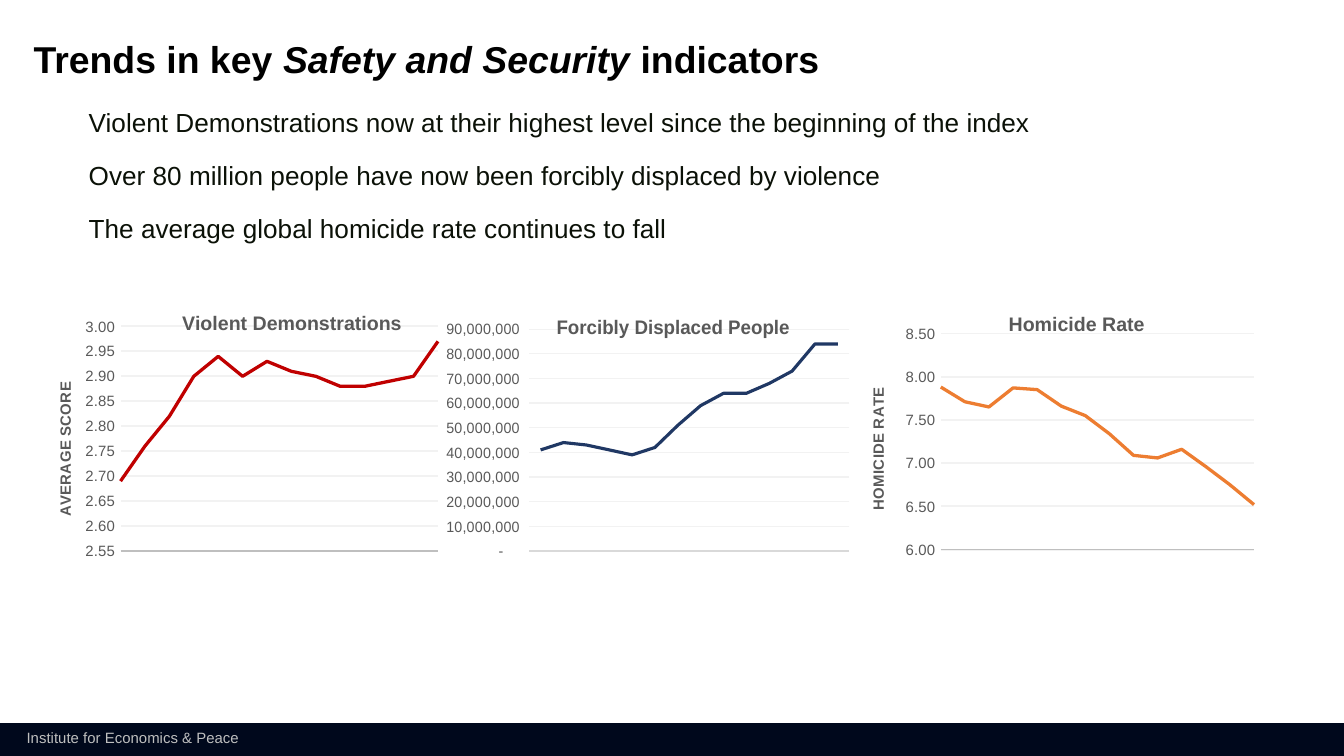
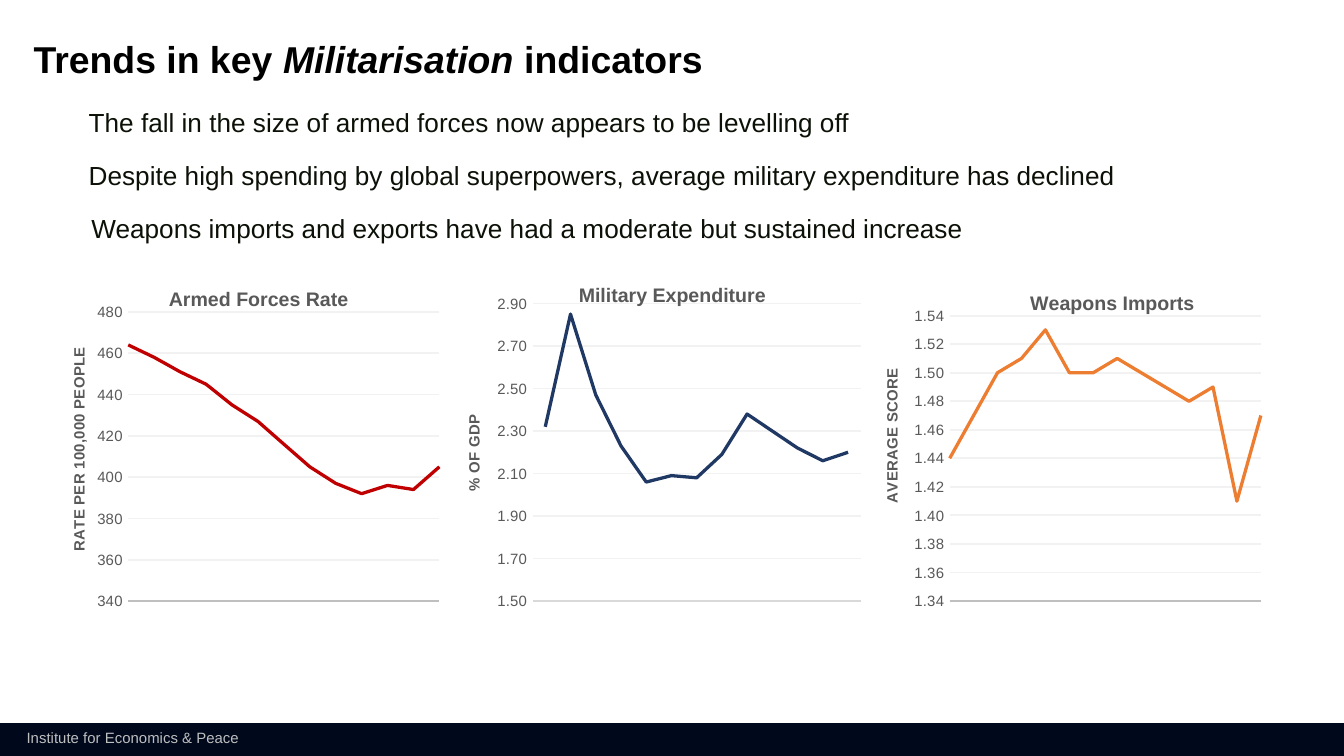
from lxml import etree
from pptx import Presentation
from pptx.chart.data import CategoryChartData
from pptx.dml.color import RGBColor
from pptx.enum.chart import XL_CHART_TYPE, XL_TICK_LABEL_POSITION, XL_TICK_MARK
from pptx.enum.shapes import MSO_SHAPE
from pptx.oxml import parse_xml
from pptx.oxml.ns import nsdecls, qn
from pptx.util import Inches, Pt

HUES = {
    "band": "00081C", "foot": "BFBFBF", "head": "000000", "body": "0B1107",
    "label": "595959", "grid": "F2F2F2", "base": "BFBFBF", "pale": "D9D9D9",
    "red": "C00000", "navy": "203864", "orange": "ED7D31",
}
HUES = {name: RGBColor.from_string(code) for name, code in HUES.items()}
FONT = "Arial"
YEARS = [str(year) for year in range(2008, 2022)]
COMMAS = r'_-* #,##0_-;\-* #,##0_-;_-* "-"??_-;_-@_'

# Each bullet: text, left, width, height
# Each chart: box and title spots in inches, plot as shares of the box
SLIDES = [
    {
        "topic": "Safety and Security ",
        "points": [
            ("Violent Demonstrations now at their highest level since the beginning of the index", 0.58, 7.61, 0.31),
            ("Over 80 million people have now been forcibly displaced by violence", 0.58, 6.19, 0.31),
            ("The average global homicide rate continues to fall", 0.58, 6.19, 0.31),
        ],
        "charts": [
            {"title": "Violent Demonstrations", "spot": (1.33, 2.28),
             "unit": "AVERAGE SCORE", "side": (0.39, 2.82),
             "box": (0.33, 2.22, 3.15, 2.09), "plot": (0.18, 0.1, 0.75, 0.8),
             "hue": "red", "scale": (2.55, 3, 0.05), "format": "#,##0.00", "years": 14,
             "vals": [2.69, 2.76, 2.82, 2.9, 2.94, 2.9, 2.93, 2.91, 2.9, 2.88, 2.88, 2.89, 2.9, 2.97]},
            {"title": "Forcibly Displaced People", "spot": (4.01, 2.31),
             "box": (3.29, 2.22, 3.15, 2.09), "plot": (0.17, 0.11, 0.79, 0.79),
             "hue": "navy", "scale": (0, 90e6, 10e6), "format": COMMAS, "years": 13,
             "vals": [n * 1000000 for n in (41, 44, 43, 41, 39, 42, 51, 59, 64, 64, 68, 73, 84, 84)]},
            {"title": "Homicide Rate", "spot": (7.48, 2.29),
             "unit": "HOMICIDE RATE", "side": (6.44, 2.86),
             "box": (6.37, 2.21, 3.15, 2.09), "plot": (0.2, 0.13, 0.74, 0.77),
             "hue": "orange", "scale": (6, 8.5, 0.5), "format": "#,##0.00", "years": 14,
             "vals": [7.88, 7.71, 7.65, 7.87, 7.85, 7.66, 7.55, 7.34, 7.09, 7.06, 7.16, 6.96, 6.75, 6.52]},
        ],
    },
    {
        "topic": "Militarisation ",
        "points": [
            ("The fall in the size of armed forces now appears to be levelling off", 0.58, 6.19, 0.31),
            ("Despite high spending by global superpowers, average military expenditure has declined", 0.58, 8.21, 0.55),
            ("Weapons imports and exports have had a moderate but sustained increase", 0.6, 6.8, 0.55),
        ],
        "charts": [
            {"title": "Armed Forces Rate", "spot": (1.23, 2.1),
             "unit": "RATE PER 100,000 PEOPLE", "side": (0.49, 2.56),
             "box": (0.36, 1.99, 3.13, 2.76), "plot": (0.19, 0.12, 0.74, 0.78),
             "hue": "red", "scale": (340, 480, 20), "format": "#,##0", "years": 13,
             "vals": [464, 458, 451, 445, 435, 427, 416, 405, 397, 392, 396, 394, 405]},
            {"title": "Military Expenditure", "spot": (4.28, 2.07),
             "unit": "% OF GDP", "side": (3.43, 3.06),
             "box": (3.4, 1.99, 3.13, 2.76), "plot": (0.18, 0.04, 0.78, 0.86),
             "hue": "navy", "scale": (1.5, 3, 0.2), "format": "0.00", "years": 13,
             "vals": [2.32, 2.85, 2.47, 2.23, 2.06, 2.09, 2.08, 2.19, 2.38, 2.3, 2.22, 2.16, 2.2]},
            {"title": "Weapons Imports", "spot": (7.64, 2.13),
             "unit": "AVERAGE SCORE", "side": (6.54, 2.72),
             "box": (6.44, 1.99, 3.13, 2.76), "plot": (0.2, 0.13, 0.74, 0.77),
             "hue": "orange", "scale": (1.34, 1.54, 0.02), "format": "#,##0.00", "years": 14,
             "vals": [1.44, 1.47, 1.5, 1.51, 1.53, 1.5, 1.5, 1.51, 1.5, 1.49, 1.48, 1.49, 1.41, 1.47]},
        ],
    },
]


def style(font, size, hue, bold=False):
    font.name, font.size, font.bold = FONT, Pt(size), bold
    font.color.rgb = HUES[hue]


def layout(node, index, **parts):
    """Give a chart part a fixed place, as shares of the chart box."""
    for old in node.findall(qn("c:layout")):
        node.remove(old)
    outer = parse_xml(f"<c:layout {nsdecls('c')}><c:manualLayout/></c:layout>")
    for key, value in parts.items():
        etree.SubElement(outer[0], qn(f"c:{key}"), val=str(value))
    node.insert(index, outer)


# Wide 16:9 page
deck = Presentation()
deck.slide_width = Inches(10)
deck.slide_height = deck.slide_width * 9 // 16

for page in SLIDES:
    slide = deck.slides.add_slide(deck.slide_layouts[6])
    shapes = slide.shapes

    # Footer band
    band = shapes.add_shape(MSO_SHAPE.RECTANGLE, 0, Inches(5.38), Inches(10), Inches(0.25))
    band.shadow.inherit = False
    band.fill.solid()
    band.fill.fore_color.rgb = HUES["band"]
    band.line.fill.background()
    foot = shapes.add_textbox(Inches(0.1), Inches(5.37), Inches(1.8), Inches(0.24))
    foot.text_frame.text = "Institute for Economics & Peace"
    style(foot.text_frame.paragraphs[0].font, 8, "foot")

    # Title
    frame = shapes.add_textbox(Inches(0.25), Inches(0.31), Inches(8.1), Inches(0.3)).text_frame
    frame.word_wrap = True
    frame.margin_left = frame.margin_right = frame.margin_top = frame.margin_bottom = 0
    line = frame.paragraphs[0]
    line.line_spacing = 0.9
    style(line.font, 20, "head", True)
    for text in ("Trends in key ", page["topic"], "indicators"):
        run = line.add_run()
        run.text = text
        run.font.italic = text == page["topic"]

    # Key points
    for row, (text, left, width, height) in enumerate(page["points"]):
        box = shapes.add_textbox(Inches(left), Inches(0.75 + row * 0.395), Inches(width), Inches(height))
        frame = box.text_frame
        frame.word_wrap = True
        frame.margin_left = frame.margin_right = Inches(0.08)
        frame.margin_top = frame.margin_bottom = Inches(0.04)
        frame.text = text
        style(frame.paragraphs[0].font, 14, "body")

    # Trend charts
    for item in page["charts"]:
        left, top, width, height = item["box"]
        data = CategoryChartData()
        data.categories = YEARS[:item["years"]]
        data.add_series(item["title"] if item["title"] == "Homicide Rate" else "Series 1", item["vals"])
        chart = shapes.add_chart(XL_CHART_TYPE.LINE, *map(Inches, item["box"]), data).chart
        chart.has_legend = False
        chart.font.name, chart.font.size = "Calibri", Pt(10)
        chart.font.color.rgb = HUES["head"]
        chart._chartSpace.find(qn("c:chart")).addnext(parse_xml(
            f"<c:spPr {nsdecls('c', 'a')}><a:solidFill><a:srgbClr val='FFFFFF'/></a:solidFill>"
            "<a:ln><a:noFill/></a:ln></c:spPr>"))

        # Line
        plot = chart.plots[0]
        plot.vary_by_categories = False
        trend = plot.series[0]
        trend.smooth = False
        trend.format.line.width = Pt(1.75)
        trend.format.line.color.rgb = HUES[item["hue"]]

        # Axes
        navy = item["hue"] == "navy"
        base, axis = chart.category_axis, chart.value_axis
        for each in (base, axis):
            each.major_tick_mark = each.minor_tick_mark = XL_TICK_MARK.NONE
        base.tick_label_position = XL_TICK_LABEL_POSITION.NONE
        base.format.line.width = Pt(0.75)
        base.format.line.color.rgb = HUES["pale" if navy else "base"]
        axis.minimum_scale, axis.maximum_scale, axis.major_unit = item["scale"]
        axis.format.line.fill.background()
        grid = axis.major_gridlines.format.line
        grid.width = Pt(0.75 if navy else 1)
        grid.color.rgb = HUES["grid"]
        labels = axis.tick_labels
        labels.number_format, labels.number_format_is_linked = item["format"], False
        style(labels.font, 8, "label")
        node = axis._element
        for old in node.findall(qn("c:crossBetween")):
            node.remove(old)
        cross = "between" if navy else "midCat"
        node.find(qn("c:crosses")).addnext(parse_xml(f"<c:crossBetween {nsdecls('c')} val='{cross}'/>"))

        # Titles and plot area
        names = [(chart.chart_title, item["title"], item["spot"], 10.5)]
        if "unit" in item:
            names.append((axis.axis_title, item["unit"], item["side"], 8))
        for title, text, (x, y), size in names:
            title.text_frame.text = text
            style(title.text_frame.paragraphs[0].font, size, "label", True)
            layout(title._element, 1, xMode="edge", yMode="edge",
                   x=round((x - left) / width, 3), y=round((y - top) / height, 3))
        if "unit" in item:
            axis.axis_title.text_frame._txBody.bodyPr.set("rot", "-5400000")
        x, y, w, h = item["plot"]
        layout(chart._chartSpace.find(".//" + qn("c:plotArea")), 0, layoutTarget="inner",
               xMode="edge", yMode="edge", x=x, y=y, w=w, h=h)

deck.save("out.pptx")
